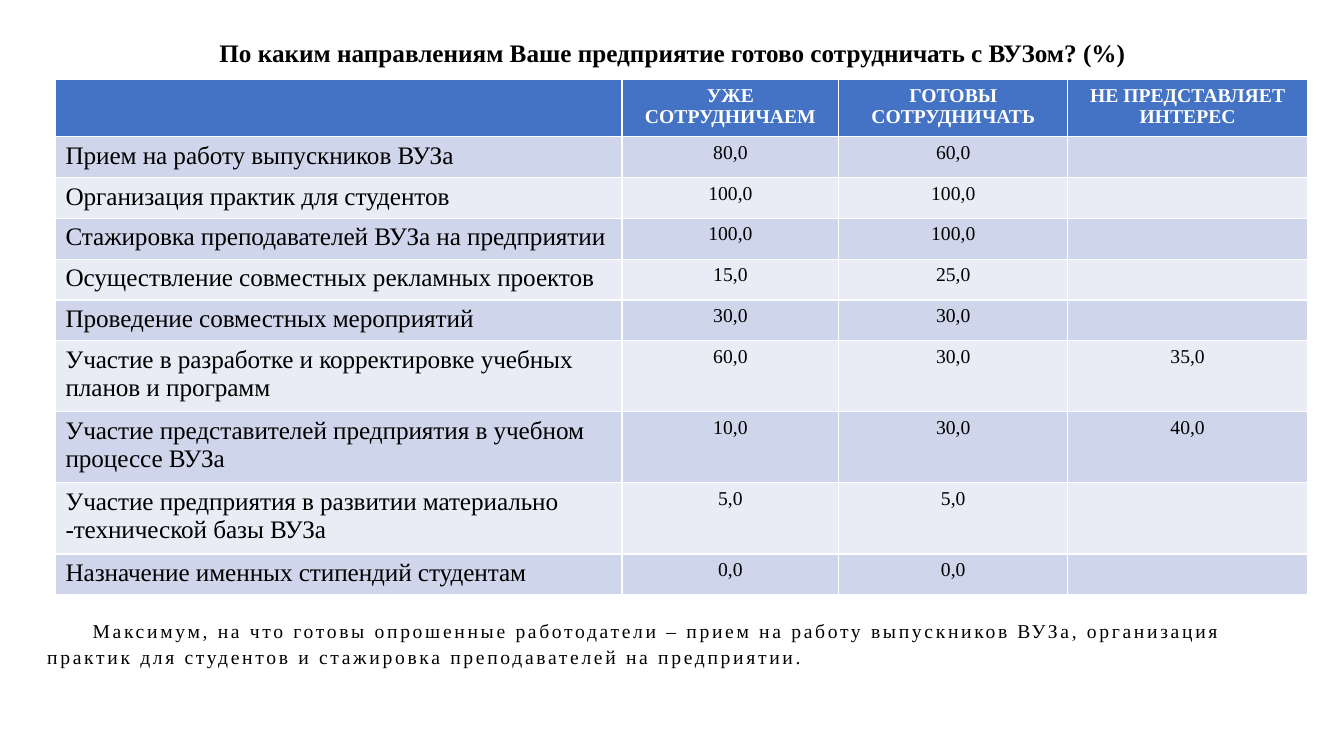
from pptx import Presentation
from pptx.dml.color import RGBColor
from pptx.enum.text import PP_ALIGN
from pptx.util import Inches, Pt

LEFT, CENTER = PP_ALIGN.LEFT, PP_ALIGN.CENTER
COLORS = {"head": "4472C4", "odd": "CFD5EA", "even": "E9EBF5",
          "text": "000000", "white": "FFFFFF"}

HEADS = ["", "УЖЕ СОТРУДНИЧАЕМ", "ГОТОВЫ СОТРУДНИЧАТЬ", "НЕ ПРЕДСТАВЛЯЕТ ИНТЕРЕС"]
ROWS = [
    ["Прием на работу выпускников ВУЗа", "80,0", "60,0", ""],
    ["Организация практик для студентов", "100,0", "100,0", ""],
    ["Стажировка преподавателей ВУЗа на предприятии", "100,0", "100,0", ""],
    ["Осуществление совместных рекламных проектов", "15,0", "25,0", ""],
    ["Проведение совместных мероприятий", "30,0", "30,0", ""],
    ["Участие в разработке и корректировке учебных планов и программ",
     "60,0", "30,0", "35,0"],
    ["Участие представителей предприятия в учебном процессе ВУЗа",
     "10,0", "30,0", "40,0"],
    ["Участие предприятия в развитии материально -технической базы ВУЗа",
     "5,0", "5,0", ""],
    ["Назначение именных стипендий студентам", "0,0", "0,0", ""],
]
WIDTHS = [5.62, 2.15, 2.27, 2.38]
HEAD_H, LINE_H, PAIR_H = 0.56, 0.405, 0.705


def write(frame, text, size, align, color="text", bold=False, gap=0):
    """Fill the first paragraph; gap is letter spacing in 1/100 pt."""
    para = frame.paragraphs[0]
    para.alignment = align
    run = para.add_run()
    run.text = text
    font = run.font
    for name, value in {"name": "Times New Roman", "size": Pt(size), "bold": bold}.items():
        setattr(font, name, value)
    font.color.rgb = RGBColor.from_string(COLORS[color])
    if gap:
        run._r.get_or_add_rPr().set("spc", str(gap))
    return para


prs = Presentation()
prs.slide_width, prs.slide_height = Inches(13.33), Inches(7.5)
slide = prs.slides.add_slide(prs.slide_layouts[6])

# Title
title = slide.shapes.add_textbox(Inches(0.37), Inches(0.32), Inches(12.6), Inches(0.4))
title.text_frame.word_wrap = True
write(title.text_frame, "По каким направлениям Ваше предприятие готово сотрудничать с ВУЗом? (%)",
      18, CENTER, bold=True)

# Survey table: labels too long for one line get a taller row
heights = [HEAD_H] + [PAIR_H if len(row[0]) > 50 else LINE_H for row in ROWS]
table = slide.shapes.add_table(len(heights), len(WIDTHS), Inches(0.55), Inches(0.79),
                               Inches(sum(WIDTHS)), Inches(sum(heights))).table
for col, width in zip(table.columns, WIDTHS):
    col.width = Inches(width)
for row, height in zip(table.rows, heights):
    row.height = Inches(height)

for r, texts in enumerate([HEADS] + ROWS):
    fill = "head" if r == 0 else "odd" if r % 2 else "even"
    for c, text in enumerate(texts):
        cell = table.cell(r, c)
        cell.fill.solid()
        cell.fill.fore_color.rgb = RGBColor.from_string(COLORS[fill])
        if not text:
            continue
        if r == 0:
            write(cell.text_frame, text, 14, CENTER, "white", bold=True)
        elif c == 0:
            write(cell.text_frame, text, 18, LEFT, gap=-5)
        else:
            write(cell.text_frame, text, 14, CENTER)

# Conclusion
note = slide.shapes.add_textbox(Inches(0.37), Inches(6.07), Inches(12.6), Inches(0.6))
note.text_frame.word_wrap = True
para = write(note.text_frame,
             "Максимум, на что готовы опрошенные работодатели – прием на работу выпускников "
             "ВУЗа, организация практик для студентов и стажировка преподавателей на предприятии.",
             14, LEFT, gap=190)
para.line_spacing = 1.1
para._p.get_or_add_pPr().set("indent", str(Inches(0.45)))

prs.save("out.pptx")
